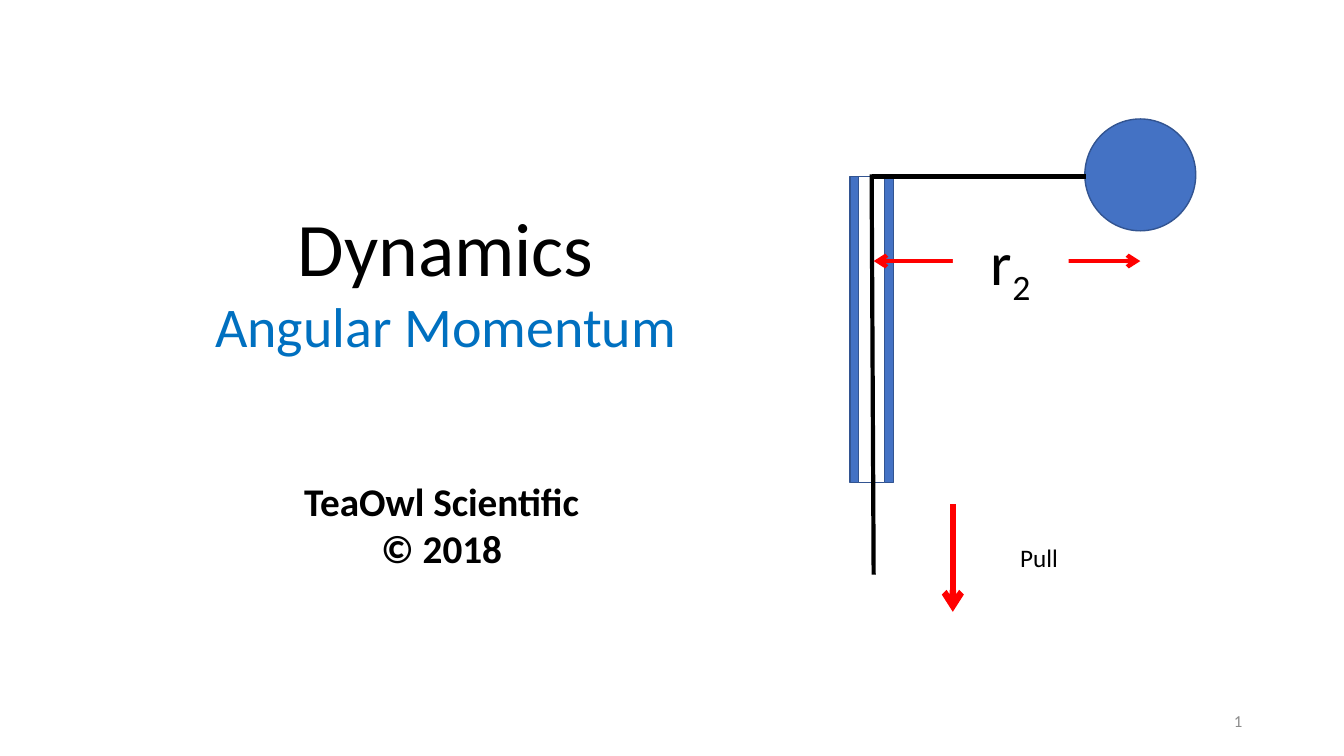
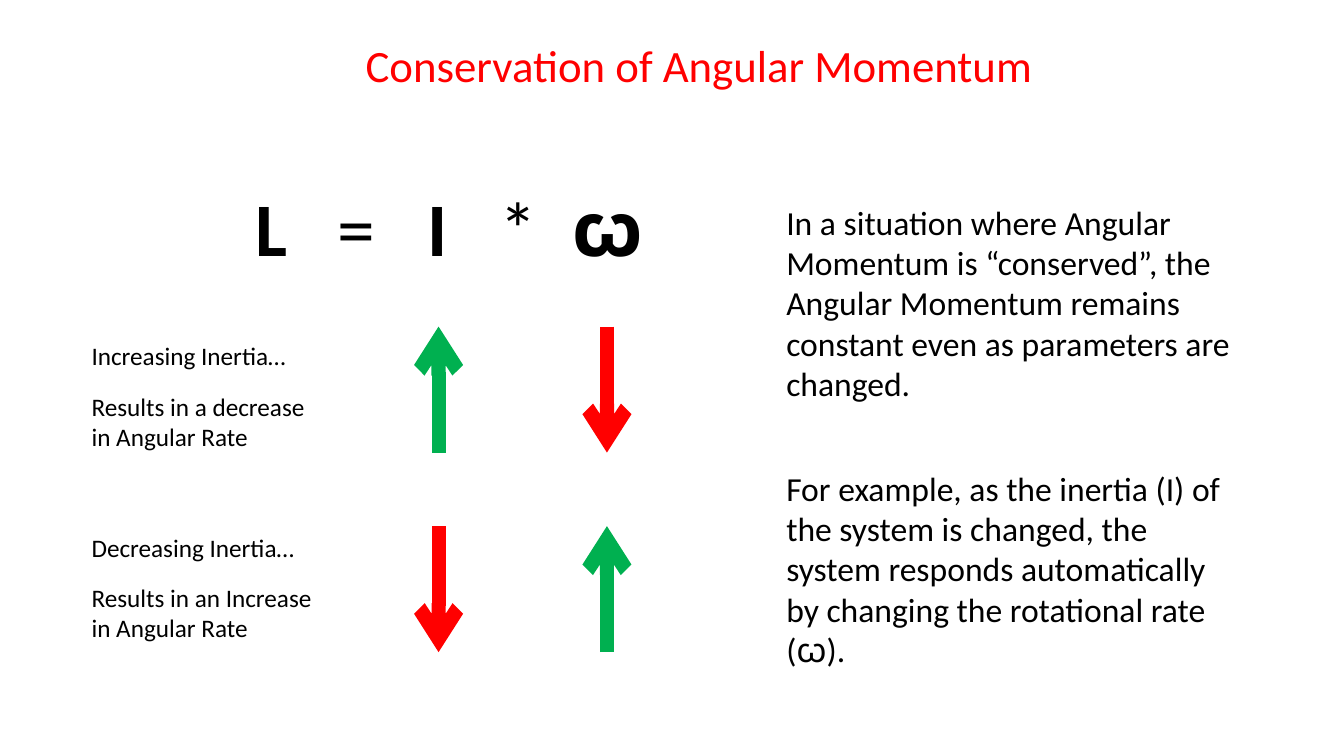
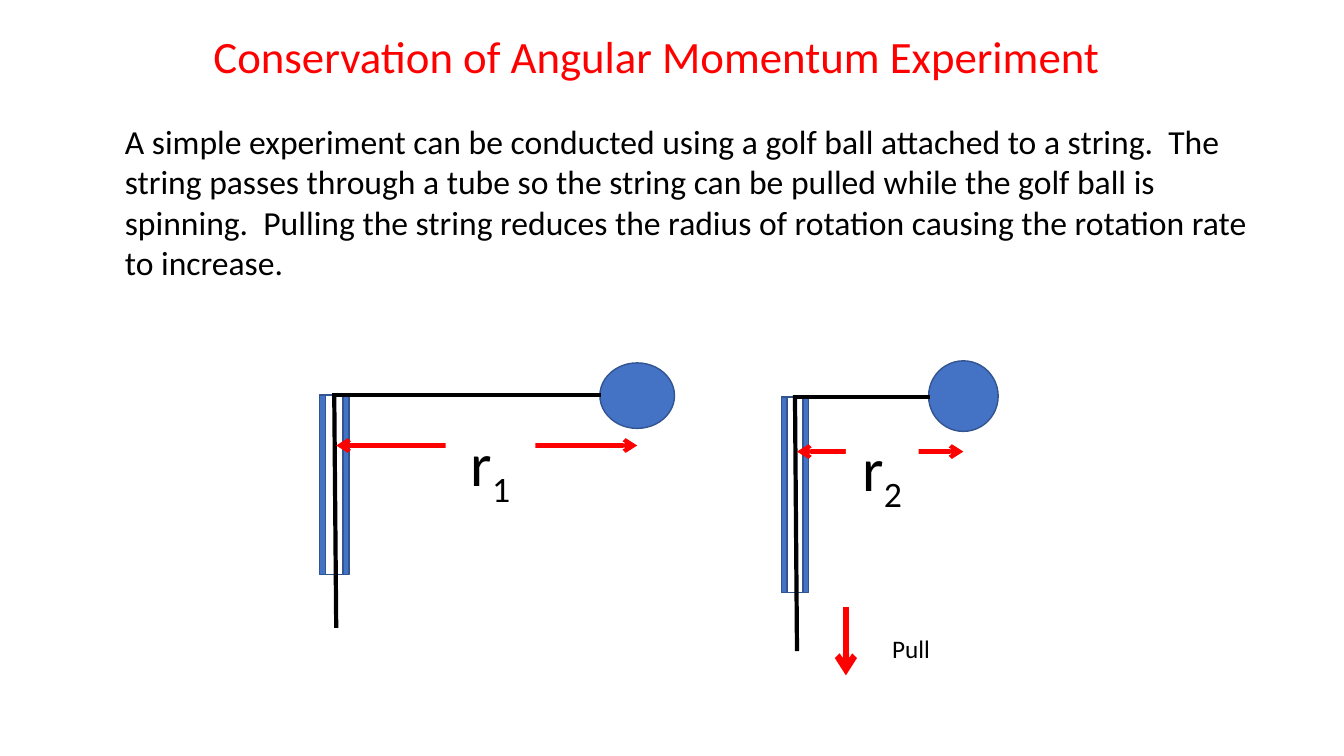
"""Build three slides on angular momentum."""
import lxml.etree
import pptx
import pptx.dml.color
import pptx.enum.shapes
import pptx.enum.text
import pptx.oxml.ns
import pptx.util

FONT = "Calibri"
INK = {
    "black": "000000", "white": "FFFFFF", "grey": "8C8C8C", "red": "FF0000",
    "green": "00B050", "sky": "0070C0", "blue": "4472C4", "navy": "325491",
}
ALIGN = {
    "left": pptx.enum.text.PP_ALIGN.LEFT,
    "center": pptx.enum.text.PP_ALIGN.CENTER,
    "right": pptx.enum.text.PP_ALIGN.RIGHT,
}
SHAPE = pptx.enum.shapes.MSO_SHAPE
ANCHOR = pptx.enum.text.MSO_ANCHOR


def color(name):
    """Return a named colour."""
    return pptx.dml.color.RGBColor.from_string(INK[name])


def inches(nums):
    """Turn numbers into lengths."""
    return [pptx.util.Inches(num) for num in nums]


def child(parent, tag, **attrs):
    """Append a drawing element."""
    return lxml.etree.SubElement(parent, pptx.oxml.ns.qn(tag), **attrs)


def text(shapes, box, *paras, size=18, ink="black", bold=False, align="left",
         anchor=ANCHOR.TOP, fill=None, tabs=()):
    """Add a text box; a paragraph is a string or a list of (string, changes)."""
    shape = shapes.add_textbox(*inches(box))
    if fill:
        shape.fill.solid()
        shape.fill.fore_color.rgb = color(fill)
    frame = shape.text_frame
    frame.word_wrap = True
    frame.vertical_anchor = anchor
    for num, parts in enumerate(paras):
        para = frame.add_paragraph() if num else frame.paragraphs[0]
        para.alignment = ALIGN[align]
        if tabs:
            stops = child(para._p.get_or_add_pPr(), "a:tabLst")
            for stop in tabs:
                child(stops, "a:tab", pos=str(pptx.util.Inches(stop)), algn="ctr")
        for words, diff in [(parts, {})] if isinstance(parts, str) else parts:
            look = {"size": size, "ink": ink, "bold": bold, **diff}
            run = para.add_run()
            run.text = words
            run.font.name = FONT
            run.font.size = pptx.util.Pt(look["size"])
            run.font.bold = look["bold"]
            run.font.color.rgb = color(look["ink"])
            if "base" in look:
                run._r.get_or_add_rPr().set("baseline", str(look["base"] * 1000))


def solid(shapes, kind, box, fill="blue"):
    """Add a filled shape with a navy edge."""
    shape = shapes.add_shape(kind, *inches(box))
    shape.shadow.inherit = False
    shape.fill.solid()
    shape.fill.fore_color.rgb = color(fill)
    shape.line.color.rgb = color("navy")
    shape.line.width = pptx.util.Pt(1)


def line(shapes, start, end, ink="black", width=3, tips=()):
    """Add a straight line with optional arrow tips."""
    link = shapes.add_connector(pptx.enum.shapes.MSO_CONNECTOR.STRAIGHT,
                                *inches((*start, *end)))
    link.line.color.rgb = color(ink)
    link.line.width = pptx.util.Pt(width)
    for tip in tips:
        child(link.line._get_or_add_ln(), tip, type="arrow")
    child(link._element.spPr, "a:effectLst")


def title(shapes, box, words):
    """Add a slide title."""
    text(shapes, box, words, size=32, ink="red", align="center")


def rig(slide, ball, tube, tag, index, foot, level):
    """Draw a ball on a string through a tube, with its radius."""
    shapes = slide.shapes.add_group_shape().shapes
    left, top, width, height = tube
    axis = left + width / 2
    solid(shapes, SHAPE.OVAL, ball)
    solid(shapes, SHAPE.RECTANGLE, tube)
    solid(shapes, SHAPE.RECTANGLE, (left + width * 0.2, top, width * 0.6, height), "white")
    line(shapes, (axis, top), (ball[0] + 0.01, top))
    line(shapes, (axis, top - 0.02), (axis + 0.02, foot))
    line(shapes, (axis + 0.02, level), (ball[0] + ball[2] / 2, level),
         ink="red", tips=("a:headEnd", "a:tailEnd"))
    text(shapes, tag, [("r", {}), (index, {"base": -25})],
         size=44, align="center", fill="white")
    return shapes


def pull(shapes, start, end, box):
    """Add the pull arrow and its label."""
    line(shapes, start, end, ink="red", width=4.5, tips=("a:tailEnd",))
    text(shapes, box, "Pull")


def trend(shapes, axis, top, rise):
    """Add a thick arrow, green up or red down."""
    ends = [(axis, top), (axis, top + 1.25)]
    start, end = reversed(ends) if rise else ends
    line(shapes, start, end, ink="green" if rise else "red", width=10,
         tips=("a:tailEnd",))


def cover(slide):
    """Fill the opening slide."""
    shapes = slide.shapes
    text(shapes, (1.71, 1.94, 5.42, 1.68), "Dynamics",
         [("Angular Momentum", {"size": 40, "ink": "sky"})], size=54, align="center")
    text(shapes, (9.42, 6.95, 3, 0.4), "1", size=12, ink="grey", align="right",
         anchor=ANCHOR.MIDDLE)
    text(shapes, (2.57, 4.69, 3.62, 1.04), "TeaOwl Scientific", "© 2018",
         size=28, bold=True, align="center")
    group = rig(slide, (10.76, 1.18, 1.1, 1.11), (8.43, 1.75, 0.43, 3.04),
                (9.45, 2.17, 1.15, 1.32), "2", foot=5.7, level=2.59)
    pull(group, (9.45, 5), (9.45, 6.07), (10.02, 5.33, 1.29, 0.63))


def theory(slide):
    """Fill the slide on conservation."""
    shapes = slide.shapes
    strong = {"bold": True}
    text(shapes, (2.44, 1.75, 4.35, 1.01),
         [("L", strong), ("\t=\t", {}), ("I", strong), ("\t*\t", {}), ("ꙍ", strong)],
         size=54, tabs=(1, 1.8, 2.6, 3.48))
    title(shapes, (1.98, 0.33, 9.91, 0.64), "Conservation of Angular Momentum")
    notes = (
        (1.95, "In a situation where Angular Momentum is “conserved”, the Angular "
               "Momentum remains constant even as parameters are changed."),
        (4.59, "For example, as the inertia (I) of the system is changed, the system "
               "responds automatically by changing the rotational rate (ꙍ)."),
    )
    for top, words in notes:
        text(shapes, (7.7, top, 4.62, 2.12), words, size=24)
    cases = (
        (3.24, True, 3.33, "Increasing Inertia…", "Results in a decrease in Angular Rate"),
        (5.22, False, 5.23, "Decreasing Inertia…", "Results in an Increase in Angular Rate"),
    )
    for top, rise, head, cause, effect in cases:
        trend(shapes, 4.35, top, rise)
        trend(shapes, 6.02, top, not rise)
        text(shapes, (0.81, head, 2.33, 0.4), cause)
        text(shapes, (0.81, head + 0.5, 2.45, 0.71), effect)


def trial(slide):
    """Fill the slide on the experiment."""
    title(slide.shapes, (1.8, 0.24, 9.43, 0.64),
          "Conservation of Angular Momentum Experiment")
    text(slide.shapes, (1.14, 1.15, 11.54, 1.72),
         "A simple experiment can be conducted using a golf ball attached to a string.  "
         "The string passes through a tube so the string can be pulled while the golf "
         "ball is spinning.  Pulling the string reduces the radius of rotation causing "
         "the rotation rate to increase.", size=24)
    rig(slide, (5.95, 3.6, 0.74, 0.65), (3.17, 3.92, 0.29, 1.78),
        (4.42, 4.17, 0.89, 0.84), "1", foot=6.23, level=4.42)
    group = rig(slide, (9.21, 3.58, 0.69, 0.7), (7.75, 3.94, 0.27, 1.94),
                (8.39, 4.22, 0.72, 0.84), "2", foot=6.46, level=4.48)
    pull(group, (8.39, 6.02), (8.39, 6.7), (8.75, 6.23, 0.81, 0.4))


def main():
    """Build and save the deck."""
    deck = pptx.Presentation()
    deck.slide_width, deck.slide_height = inches((13.33, 7.5))
    for build in (cover, theory, trial):
        build(deck.slides.add_slide(deck.slide_layouts[6]))
    deck.save("out.pptx")


if __name__ == "__main__":
    main()
